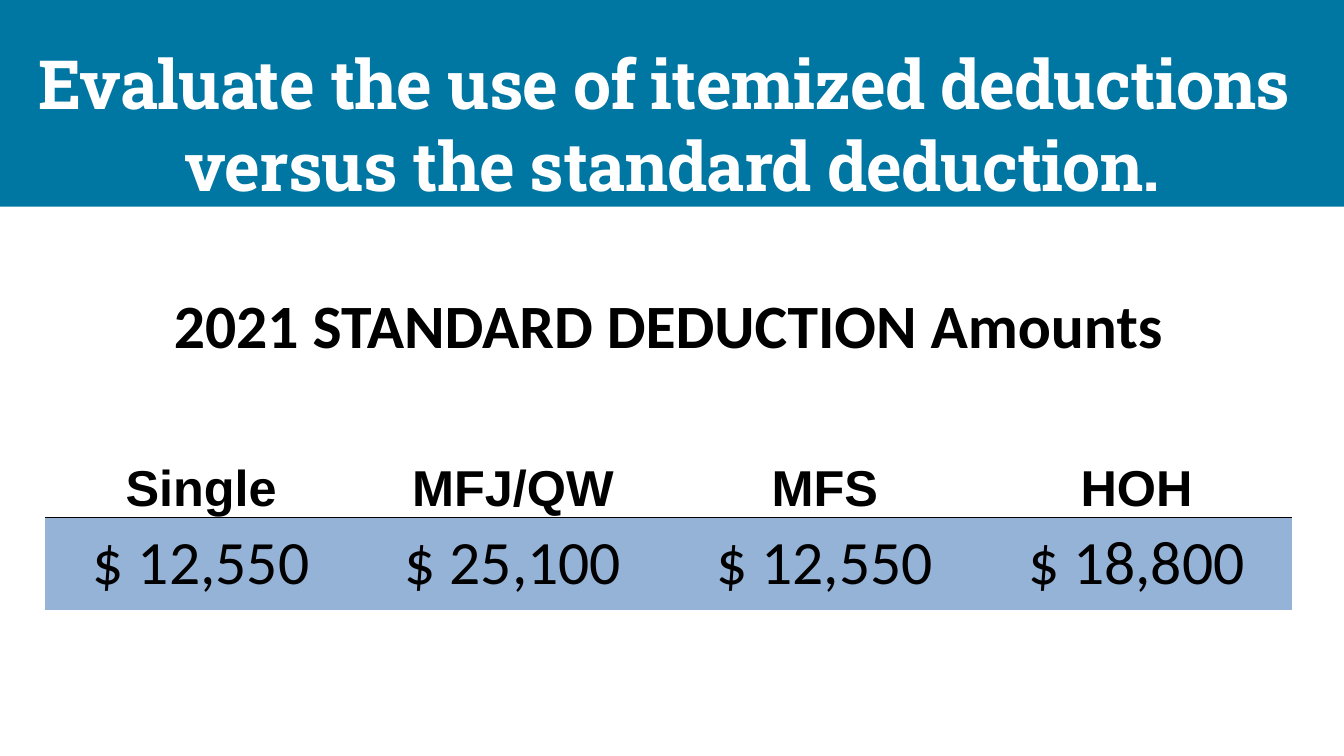
"""Build the 2021 standard deduction slide."""
from lxml.etree import SubElement
from pptx import Presentation
from pptx.dml.color import RGBColor
from pptx.enum.shapes import MSO_SHAPE
from pptx.enum.text import MSO_ANCHOR, PP_ALIGN
from pptx.oxml.ns import qn
from pptx.util import Inches, Pt

TEAL = RGBColor(0x00, 0x76, 0xA3)
BLUE = RGBColor(0x95, 0xB3, 0xD7)
WHITE = RGBColor(0xFF, 0xFF, 0xFF)
BLACK = RGBColor(0x00, 0x00, 0x00)
NO_STYLE = "{2D5ABB26-0587-4C30-8999-92F81FD0307C}"


def style(p, font, size, color, bold):
    p.alignment = PP_ALIGN.CENTER
    p.font.name = font
    p.font.size = Pt(size)
    p.font.color.rgb = color
    p.font.bold = bold


def add_border(cell, side):
    ln = SubElement(cell._tc.get_or_add_tcPr(), qn(f"a:{side}"), w=str(Pt(0.5)))
    fill = SubElement(ln, qn("a:solidFill"))
    SubElement(fill, qn("a:srgbClr"), val=str(BLACK))


prs = Presentation()
prs.slide_width = Inches(13.33)
prs.slide_height = Inches(7.5)
s = prs.slides.add_slide(prs.slide_layouts[6])

banner = s.shapes.add_shape(MSO_SHAPE.RECTANGLE, 0, 0, prs.slide_width, Inches(2.05))
banner.shadow.inherit = False
banner.fill.solid()
banner.fill.fore_color.rgb = TEAL
banner.line.fill.background()
tf = banner.text_frame
tf.word_wrap = True
tf.vertical_anchor = MSO_ANCHOR.BOTTOM
tf.margin_left = tf.margin_right = tf.margin_top = 0
tf.margin_bottom = Inches(0.02)
p = tf.paragraphs[0]
p.text = "Evaluate the use of itemized deductions \vversus the standard deduction."
style(p, "Roboto Slab", 48.5, WHITE, True)
for r in p.runs:
    r._r.get_or_add_rPr().set("spc", "-60")

rows = [
    (1.08, ["2021 STANDARD DEDUCTION Amounts"], "Calibri", 44, True, WHITE, MSO_ANCHOR.TOP, None),
    (1.18, ["Single", "MFJ/QW", "MFS", "HOH"], "Arial", 36, True, WHITE, MSO_ANCHOR.BOTTOM, "lnB"),
    (0.92, ["$ 12,550", "$ 25,100", "$ 12,550", "$ 18,800"], "Calibri", 44, False, BLUE,
     MSO_ANCHOR.MIDDLE, "lnT"),
]
frame = s.shapes.add_table(3, 4, Inches(0.45), Inches(2.87), Inches(12.37), Inches(3.18))
table = frame.table
table._tbl.tblPr.find(qn("a:tableStyleId")).text = NO_STYLE
table.cell(0, 0).merge(table.cell(0, 3))
for i, (height, texts, font, size, bold, fill, anchor, side) in enumerate(rows):
    table.rows[i].height = Inches(height)
    for j, text in enumerate(texts):
        cell = table.cell(i, j)
        cell.margin_left = cell.margin_right = cell.margin_top = Inches(0.01)
        cell.margin_bottom = 0
        cell.vertical_anchor = anchor
        if side:
            add_border(cell, side)
        cell.fill.solid()
        cell.fill.fore_color.rgb = fill
        p = cell.text_frame.paragraphs[0]
        p.text = text
        style(p, font, size, BLACK, bold)

prs.save("out.pptx")
